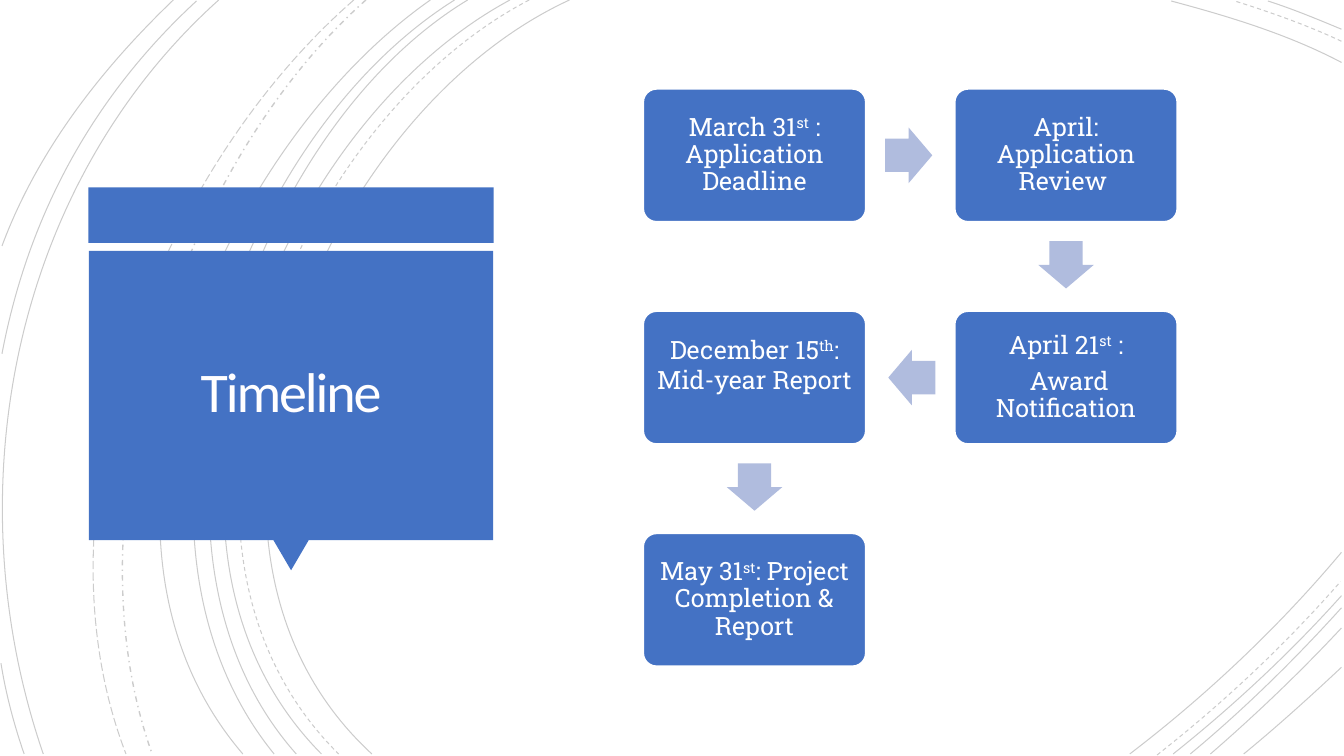
from math import atan2, cos, degrees, sin
from typing import NamedTuple

from lxml import etree
from pptx import Presentation
from pptx.dml.color import RGBColor
from pptx.enum import dml, shapes, text
from pptx.oxml.ns import qn
from pptx.util import Cm, Pt

COLORS = {"blue": "4472C4", "arrow": "B0BCDE", "white": "FFFFFF",
          "title": "FFFEFF", "arc": "000000"}
SHAPE = shapes.MSO_SHAPE
DASH = dml.MSO_LINE

# Step grid, in cm
GRID_LEFT, GRID_TOP = 16.21, 2.24
PITCH_X, PITCH_Y = 7.85, 5.6
STEP_W, STEP_H = 5.61, 3.35
ARROW_W, ARROW_H = 1.19, 1.4
ARROW_PULLBACK = 0.04
INSET = 0.18
ARC_UNIT = Cm(0.0254)

STEP_FONT = {"name": "Roboto Slab", "size": Pt(18)}
TITLE_FONT = {"name": "Calibri", "size": Pt(40)}


class Arc(NamedTuple):
    """Cubic curve: start, two control points, end, in ARC_UNIT."""
    points: list[tuple[int, int]]
    dash: dml.MSO_LINE = DASH.SOLID
    weight: float = 0.75


class Step(NamedTuple):
    """Box in the grid; text between carets is superscript."""
    col: int
    row: int
    lines: list[str]
    spacing: float = 0.9
    bottom: float = INSET

    def center(self) -> tuple[float, float]:
        return (GRID_LEFT + self.col * PITCH_X + STEP_W / 2,
                GRID_TOP + self.row * PITCH_Y + STEP_H / 2)


class Panel(NamedTuple):
    kind: shapes.MSO_SHAPE
    left: float
    top: float
    width: float
    height: float
    rotation: float = 0


ARCS = [
    Arc([(565, 0), (315, 115), (143, 540), (369, 748)]),
    Arc([(1331, 62), (1278, 34), (1218, 16), (1162, 1)]),
    Arc([(1121, 748), (1197, 690), (1269, 622), (1331, 548)]),
    Arc([(525, 0), (285, 125), (123, 537), (336, 748)], DASH.DASH),
    Arc([(1331, 41), (1297, 25), (1260, 12), (1225, 1)], DASH.DASH),
    Arc([(1148, 749), (1213, 698), (1275, 640), (1330, 577)], DASH.DASH),
    Arc([(506, 0), (270, 127), (110, 537), (319, 748)]),
    Arc([(1331, 29), (1307, 19), (1283, 9), (1258, 1)]),
    Arc([(1164, 748), (1223, 701), (1280, 648), (1331, 591)]),
    Arc([(464, 0), (244, 133), (110, 541), (294, 748)]),
    Arc([(1181, 748), (1234, 704), (1284, 655), (1331, 603)]),
    Arc([(451, 0), (231, 138), (97, 533), (272, 748)]),
    Arc([(1201, 748), (1246, 709), (1290, 667), (1331, 623)]),
    Arc([(427, 0), (217, 147), (53, 529), (241, 748)]),
    Arc([(1234, 748), (1267, 721), (1299, 692), (1331, 662)]),
    Arc([(363, 0), (176, 166), (65, 509), (151, 748)], DASH.DASH_DOT, 1),
    Arc([(351, 0), (157, 169), (29, 499), (125, 748)], DASH.LONG_DASH),
    Arc([(217, 0), (11, 185), (-46, 490), (43, 748)]),
    Arc([(195, 1), (92, 96), (28, 214), (2, 351)]),
    Arc([(1, 658), (6, 689), (14, 719), (24, 748)]),
    Arc([(172, 0), (100, 69), (37, 150), (2, 244)]),
]

PANELS = [
    Panel(SHAPE.RECTANGLE, 2.23, 4.72, 10.21, 1.4),
    Panel(SHAPE.ISOSCELES_TRIANGLE, 6.89, 13.61, 0.89, 0.76, 180),
    Panel(SHAPE.RECTANGLE, 2.24, 6.32, 10.19, 7.29),
]

STEPS = [
    Step(0, 0, ["March 31^st^ : Application Deadline"]),
    Step(1, 0, ["April: Application Review "]),
    Step(1, 1, ["April 21^st^ :", " Award Notification"]),
    Step(0, 1, ["December 15^th^: Mid-year Report"], spacing=1, bottom=0.84),
    Step(0, 2, ["May 31^st^: Project Completion & Report"]),
]


def rgb(name: str) -> RGBColor:
    return RGBColor.from_string(COLORS[name])


def draw_arc(slide, arc: Arc) -> None:
    builder = slide.shapes.build_freeform(*arc.points[0], scale=ARC_UNIT)
    builder.add_line_segments(arc.points[1:], close=False)
    curve = builder.convert_to_shape()
    curve.shadow.inherit = False
    curve.fill.background()
    curve.line.color.rgb = rgb("arc")
    curve.line.width = Pt(arc.weight)
    curve.line.dash_style = arc.dash
    # Turn the three segments into one cubic curve
    segments = list(curve.element.iter(qn("a:lnTo")))
    outline = segments[0].getparent()
    cubic = etree.SubElement(outline, qn("a:cubicBezTo"))
    for segment in segments:
        cubic.append(segment[0])
        outline.remove(segment)
    for ink in curve.element.iter(qn("a:srgbClr")):
        etree.SubElement(ink, qn("a:alpha")).set("val", "20000")


def draw_block(slide, panel: Panel, color: str = "blue"):
    box = map(Cm, (panel.left, panel.top, panel.width, panel.height))
    block = slide.shapes.add_shape(panel.kind, *box)
    block.rotation = panel.rotation
    block.shadow.inherit = False
    block.fill.solid()
    block.fill.fore_color.rgb = rgb(color)
    block.line.fill.background()
    return block


def add_run(paragraph, words: str, font: dict, color: str, **extra: str) -> None:
    run = paragraph.add_run()
    run.text = words
    for key, value in font.items():
        setattr(run.font, key, value)
    run.font.color.rgb = rgb(color)
    for key, value in extra.items():
        run.font._element.set(key, value)


def set_frame(frame, inset: float, bottom: float) -> None:
    layout = {"word_wrap": True, "vertical_anchor": text.MSO_ANCHOR.MIDDLE,
              "margin_left": Cm(inset), "margin_right": Cm(inset),
              "margin_top": Cm(inset), "margin_bottom": Cm(bottom)}
    for key, value in layout.items():
        setattr(frame, key, value)


def draw_step(slide, step: Step) -> None:
    x, y = step.center()
    card = draw_block(slide, Panel(SHAPE.ROUNDED_RECTANGLE, x - STEP_W / 2,
                                   y - STEP_H / 2, STEP_W, STEP_H))
    card.adjustments[0] = 0.1
    card.line.color.rgb = rgb("white")
    card.line.width = Pt(1.25)
    frame = card.text_frame
    set_frame(frame, INSET, step.bottom)
    for i, line in enumerate(step.lines):
        paragraph = frame.add_paragraph() if i else frame.paragraphs[0]
        paragraph.alignment = text.PP_ALIGN.CENTER
        paragraph.line_spacing = step.spacing
        paragraph.space_after = Pt(6.3)
        for j, words in enumerate(line.split("^")):
            raised = {"baseline": "30000"} if j % 2 else {}
            add_run(paragraph, words, STEP_FONT, "white", **raised)


def draw_arrow(slide, start: Step, end: Step) -> None:
    (x1, y1), (x2, y2) = start.center(), end.center()
    angle = atan2(y2 - y1, x2 - x1)
    x = (x1 + x2) / 2 - ARROW_PULLBACK * cos(angle)
    y = (y1 + y2) / 2 - ARROW_PULLBACK * sin(angle)
    arrow = draw_block(slide, Panel(SHAPE.RIGHT_ARROW, x - ARROW_W / 2, y - ARROW_H / 2,
                                    ARROW_W, ARROW_H, degrees(angle)), "arrow")
    arrow.adjustments[0] = 0.6
    arrow.adjustments[1] = 0.5


def main() -> None:
    deck = Presentation()
    deck.slide_width, deck.slide_height = Cm(33.87), Cm(19.05)
    slide = deck.slides.add_slide(deck.slide_layouts[6])

    # Background arcs
    for arc in ARCS:
        draw_arc(slide, arc)

    # Title panel
    *_, title = [draw_block(slide, panel) for panel in PANELS]
    set_frame(title.text_frame, 0.64, 0.64)
    heading = title.text_frame.paragraphs[0]
    heading.alignment = text.PP_ALIGN.CENTER
    heading.line_spacing = 0.85
    add_run(heading, "Timeline", TITLE_FONT, "title", spc="-150")

    # Timeline steps and the arrows between them
    for step in STEPS:
        draw_step(slide, step)
    for start, end in zip(STEPS, STEPS[1:]):
        draw_arrow(slide, start, end)

    deck.save("out.pptx")


if __name__ == "__main__":
    main()
